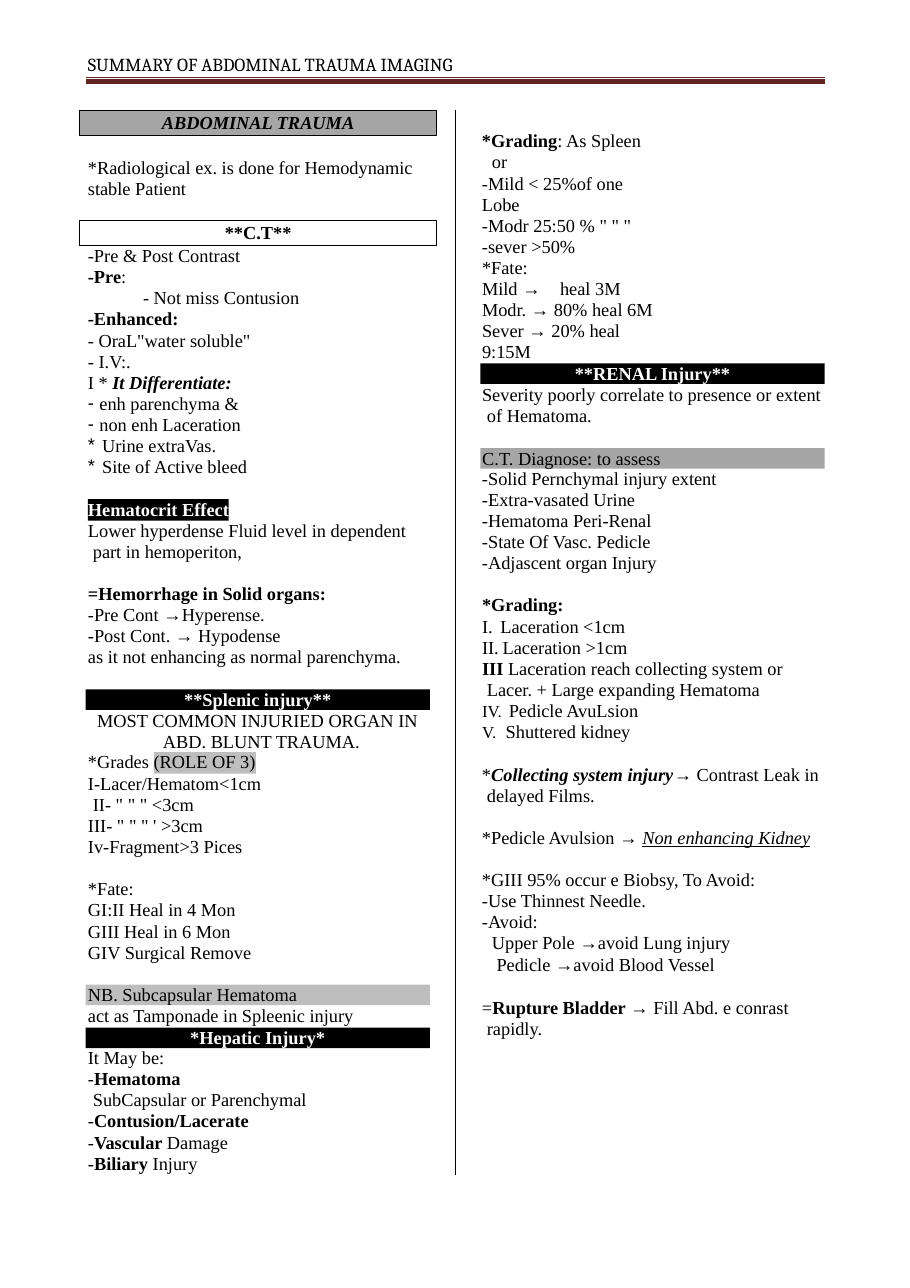
"""Build a one-page summary of abdominal trauma imaging."""
from dataclasses import dataclass
from itertools import groupby
from typing import Optional

from lxml import etree
from pptx import Presentation
from pptx import util as u
from pptx.dml import color
from pptx.enum import shapes, text
from pptx.oxml import ns

SERIF = "Times New Roman"
ARROW = "→"
LINE_HEIGHT = 13.8
LEFT, RIGHT = 57.5, 315
HANG = 3.2


@dataclass(frozen=True)
class Span:
    text: str
    bold: Optional[bool] = None
    italic: Optional[bool] = None
    underline: Optional[bool] = None


@dataclass(frozen=True)
class Line:
    spans: tuple[Span, ...]
    indent: float = 0
    hang: float = 0
    bullet: str = ""
    start: int = 1
    centred: bool = False


@dataclass(frozen=True)
class Block:
    left: float
    top: float
    width: float
    lines: tuple[Line, ...]


@dataclass(frozen=True)
class Bar:
    left: float
    top: float
    width: float
    height: float
    line: Optional[Line] = None
    fill: str = ""
    ink: str = "000000"
    outlined: bool = False
    inset: float = 0


@dataclass(frozen=True)
class Rule:
    x1: float
    y1: float
    x2: float
    y2: float
    ink: str
    weight: float


def plain(words: str, indent: float = 0, hang: float = 0) -> Line:
    return Line((Span(words),), indent, hang)


def bold(words: str, rest: str = "", lead: str = "") -> Line:
    return Line((Span(lead), Span(words, True), Span(rest)))


def item(words: str, bullet: str, indent: float, start: int = 1) -> Line:
    return Line((Span(words),), indent, indent, bullet, start)


def heading(words: str, italic: Optional[bool] = None) -> Line:
    return Line((Span(words, True, italic),), centred=True)


RULES = (
    Rule(56, 53.4, 539.3, 53.4, "612322", 3),
    Rule(56, 50.5, 539.3, 50.5, "612322", 0.72),
    Rule(297.4, 72, 297.4, 768, "000000", 0.72),
)

BARS = (
    Bar(52, 72, 233.5, 16.6, heading("ABDOMINAL TRAUMA", True), "A6A6A6", outlined=True),
    Bar(52, 144, 233.5, 16.6, heading("**C.T**"), outlined=True),
    Bar(57.5, 326.2, 92, 14, fill="000000"),
    Bar(56, 450.5, 225, 13.4, heading("**Splenic injury**"), "000000", "FFFFFF"),
    Bar(100.6, 491.6, 66.6, 14, fill="BEBEBE"),
    Bar(56, 643.5, 225, 13.4, plain("NB. Subcapsular Hematoma"), "BEBEBE", inset=1.4),
    Bar(56, 671.5, 225, 13.4, heading("*Hepatic Injury*"), "000000", "FFFFFF"),
    Bar(314, 237.4, 225, 13.4, heading("**RENAL Injury**"), "000000", "FFFFFF"),
    Bar(314, 292.8, 225, 13.4, plain("C.T. Diagnose: to assess"), "A6A6A6", inset=1.2),
)

BLOCKS = (
    Block(LEFT, 102.6, 222, (plain("*Radiological ex. is done for Hemodynamic\vstable Patient"),)),
    Block(LEFT, 160.2, 150, (
        plain("-Pre & Post Contrast"),
        bold("-Pre", ":"),
        plain("- Not miss Contusion", 36),
        bold("-Enhanced:"),
        plain('- OraL"water soluble"'),
        plain("- I.V:."),
        Line((Span("I * "), Span("It Differentiate:", True, True))),
        item("enh parenchyma &", "-", 7.5),
        item("non enh Laceration", "-", 7.5),
        item("Urine extraVas.", "*", 9.3),
        item("Site of Active bleed", "*", 9.3),
    )),
    Block(LEFT, 340, 215, (
        plain("Lower hyperdense Fluid level in dependent\vpart in hemoperiton,", HANG, HANG),
    )),
    Block(LEFT, 381, 212, (
        bold("=Hemorrhage in Solid organs:"),
        plain("-Pre Cont →Hyperense."),
        plain("-Post Cont. → Hypodense"),
        plain("as it not enhancing as normal parenchyma."),
    )),
    Block(63.5, 464, 216, (
        plain("MOST COMMON INJURIED ORGAN IN\vABD. BLUNT TRAUMA.", 43, 43),
    )),
    Block(LEFT, 491, 116, (plain("*Grades (ROLE OF 3)"),)),
    Block(LEFT, 505, 120, (
        plain("I-Lacer/Hematom<1cm"),
        plain('II- " " " <3cm', HANG),
        plain("III- \" \" \" ' >3cm"),
        plain("Iv-Fragment>3 Pices"),
    )),
    Block(LEFT, 574, 118, (
        plain("*Fate:"),
        plain("GI:II Heal in 4 Mon"),
        plain("GIII Heal in 6 Mon"),
        plain("GIV Surgical Remove"),
    )),
    Block(LEFT, 656.6, 180, (plain("act as Tamponade in Spleenic injury"),)),
    Block(LEFT, 684.3, 152, (
        plain("It May be:"),
        bold("Hematoma", lead="-"),
        plain("SubCapsular or Parenchymal", HANG),
        bold("Contusion/Lacerate", lead="-"),
        bold("Vascular ", "Damage", "-"),
        bold("Biliary ", "Injury", "-"),
    )),
    Block(RIGHT, 85.2, 122, (
        bold("*Grading", ": As Spleen"),
        plain("or", 6.5),
        plain("-Mild < 25%of one\vLobe"),
        plain('-Modr 25:50 % " " "'),
        plain("-sever >50%"),
    )),
    Block(RIGHT, 167.8, 134, (
        plain("*Fate:"),
        plain("Mild →\theal 3M", 51, 51),
        plain("Modr. → 80% heal 6M"),
        plain("Sever → 20% heal\v9:15M"),
    )),
    Block(RIGHT, 251, 226, (
        plain("Severity poorly correlate to presence or extent\vof Hematoma.", HANG, HANG),
    )),
    Block(RIGHT, 305.8, 160, (
        plain("-Solid Pernchymal injury extent"),
        plain("-Extra-vasated Urine"),
        plain("-Hematoma Peri-Renal"),
        plain("-State Of Vasc. Pedicle"),
        plain("-Adjascent organ Injury"),
    )),
    Block(RIGHT, 388.5, 204, (
        bold("*Grading:"),
        item("Laceration <1cm", "roman", 12),
        item("Laceration >1cm", "roman", 13.5),
        Line((Span("III ", True), Span("Laceration reach collecting system or"
              "\vLacer. + Large expanding Hematoma")), HANG, HANG),
        item("Pedicle AvuLsion", "roman", 17.5, 4),
        item("Shuttered kidney", "roman", 15.5, 4),
    )),
    Block(RIGHT, 499.2, 225, (
        Line((Span("*"), Span("Collecting system injury", True, True),
              Span("→ Contrast Leak in\vdelayed Films.")), HANG, HANG),
    )),
    Block(RIGHT, 540.5, 222, (
        Line((Span("*Pedicle Avulsion → "), Span("Non enhancing Kidney", None, True, True))),
    )),
    Block(RIGHT, 568, 186, (
        plain("*GIII 95% occur e Biobsy, To Avoid:"),
        plain("-Use Thinnest Needle."),
        plain("-Avoid:"),
        plain("Upper Pole →avoid Lung injury", 6.5),
        plain("Pedicle →avoid Blood Vessel", 9.5),
    )),
    Block(RIGHT, 651.3, 208, (
        Line((Span("="), Span("Rupture Bladder ", True),
              Span("→ Fill Abd. e conrast\vrapidly.")), HANG, HANG),
    )),
)

HEMATOCRIT = Block(LEFT, 326.2, 110, (bold("Hematocrit Effect"),))


def rgb(code: str) -> color.RGBColor:
    return color.RGBColor.from_string(code)


def add_element(parent, tag: str, **attributes: str):
    return etree.SubElement(parent, ns.qn(tag), attributes)


def format_paragraph(para, line: Line) -> None:
    para.alignment = text.PP_ALIGN.CENTER if line.centred else text.PP_ALIGN.LEFT
    para.line_spacing = u.Pt(LINE_HEIGHT)
    props = para._p.get_or_add_pPr()
    props.set("marL", str(u.Pt(line.indent)))
    props.set("indent", str(u.Pt(-line.hang)))
    if line.bullet == "roman":
        add_element(props, "a:buSzPct", val="92000" if line.start > 1 else "100000")
        add_element(props, "a:buFont", typeface=SERIF)
        add_element(props, "a:buAutoNum", type="romanUcPeriod", startAt=str(line.start))
    elif line.bullet:
        add_element(props, "a:buFont", typeface="Arial")
        add_element(props, "a:buChar", char=line.bullet)


def write_line(para, line: Line, ink: str, face: str = SERIF) -> None:
    format_paragraph(para, line)
    para.font.name, para.font.size = face, u.Pt(12)
    para.font.color.rgb = rgb(ink)
    for span in line.spans:
        for kind, letters in groupby(span.text, lambda c: c if c in (ARROW, "\v") else ""):
            if kind == "\v":
                para.add_line_break()
                continue
            run = para.add_run()
            run.text = "".join(letters)
            run.font.bold, run.font.italic = span.bold, span.italic
            run.font.underline = span.underline
            if kind == ARROW:
                run.font.name = "Arial"


def prepare_frame(frame, anchor, inset: float = 0) -> None:
    frame.word_wrap = True
    frame.auto_size = text.MSO_AUTO_SIZE.NONE
    frame.vertical_anchor = anchor
    frame.margin_left = u.Pt(inset)
    frame.margin_right = frame.margin_top = frame.margin_bottom = 0


def draw_title(page) -> None:
    title = page.shapes.title
    title.left, title.top, title.width, title.height = map(u.Pt, (LEFT, 35.2, 260, 16))
    prepare_frame(title.text_frame, text.MSO_ANCHOR.TOP)
    words = plain("SUMMARY OF ABDOMINAL TRAUMA IMAGING")
    write_line(title.text_frame.paragraphs[0], words, "000000", "Cambria")


def draw_rule(page, rule: Rule) -> None:
    ends = map(u.Pt, (rule.x1, rule.y1, rule.x2, rule.y2))
    connector = page.shapes.add_connector(shapes.MSO_CONNECTOR.STRAIGHT, *ends)
    connector.line.color.rgb = rgb(rule.ink)
    connector.line.width = u.Pt(rule.weight)
    add_element(connector._element.spPr, "a:effectLst")


def draw_bar(page, bar: Bar) -> None:
    place = map(u.Pt, (bar.left, bar.top, bar.width, bar.height))
    shape = page.shapes.add_shape(shapes.MSO_SHAPE.RECTANGLE, *place)
    shape.shadow.inherit = False
    if bar.fill:
        shape.fill.solid()
        shape.fill.fore_color.rgb = rgb(bar.fill)
    else:
        shape.fill.background()
    if bar.outlined:
        shape.line.color.rgb = rgb("000000")
        shape.line.width = u.Pt(0.48)
    else:
        shape.line.fill.background()
    if bar.line:
        prepare_frame(shape.text_frame, text.MSO_ANCHOR.MIDDLE, bar.inset)
        write_line(shape.text_frame.paragraphs[0], bar.line, bar.ink)


def draw_block(page, block: Block, ink: str = "000000") -> None:
    rows = sum(1 + span.text.count("\v") for line in block.lines for span in line.spans[-1:])
    place = map(u.Pt, (block.left, block.top, block.width, rows * LINE_HEIGHT))
    frame = page.shapes.add_textbox(*place).text_frame
    prepare_frame(frame, text.MSO_ANCHOR.TOP)
    for index, line in enumerate(block.lines):
        para = frame.add_paragraph() if index else frame.paragraphs[0]
        write_line(para, line, ink)


def main() -> None:
    deck = Presentation()
    deck.slide_width, deck.slide_height = u.Pt(594.72), u.Pt(841.68)
    page = deck.slides.add_slide(deck.slide_layouts[5])
    draw_title(page)
    for draw, parts in ((draw_rule, RULES), (draw_bar, BARS), (draw_block, BLOCKS)):
        for part in parts:
            draw(page, part)
    draw_block(page, HEMATOCRIT, "FFFFFF")
    deck.save("out.pptx")


if __name__ == "__main__":
    main()
